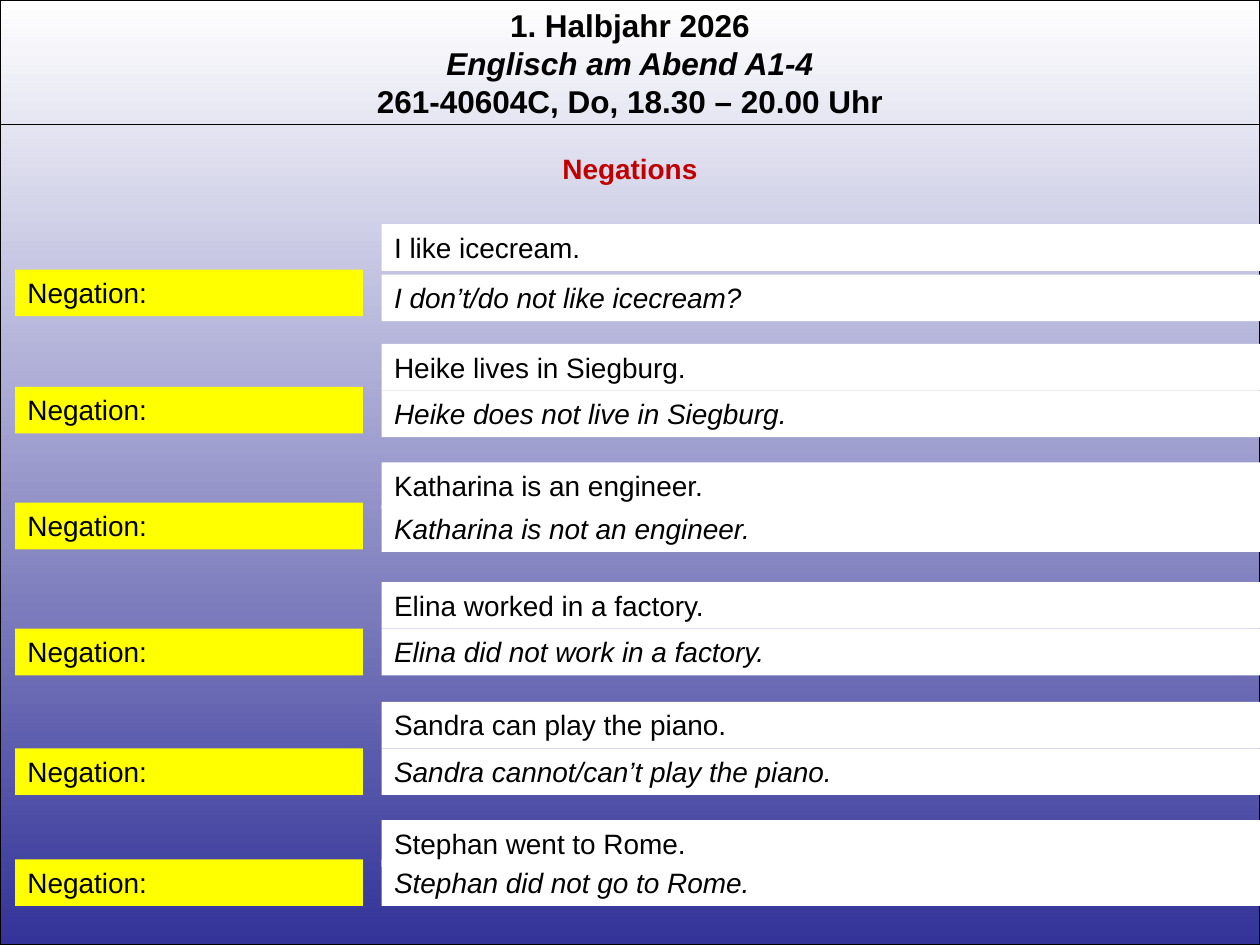
from lxml import etree
from pptx import Presentation
from pptx import util as u
from pptx.dml.color import RGBColor
from pptx.enum import shapes, text
from pptx.oxml.ns import qn

PX = u.Inches(1) // 100
WIDTH, HEIGHT = 1000, 750
LINE_HEIGHT = 37
FONT = "Arial"
COLORS = {
    "ink": "000000",
    "paper": "FFFFFF",
    "depth": "333399",
    "label": "FFFF00",
    "heading": "C00000",
}
EXERCISES = [
    ("I like icecream.", "I don’t/do not like icecream?", 36, 40),
    ("Heike lives in Siegburg.", "Heike does not live in Siegburg.", 34, 37),
    ("Katharina is an engineer.", "Katharina is not an engineer.", 32, 34),
    ("Elina worked in a factory.", "Elina did not work in a factory.", 37, 37),
    ("Sandra can play the piano.", "Sandra cannot/can’t play the piano.", 37, 37),
    ("Stephan went to Rome.", "Stephan did not go to Rome.", 31, 31),
]


def color(name):
    """Return the named palette colour."""
    return RGBColor.from_string(COLORS[name])


def px(*lengths):
    """Convert pixel lengths to EMU."""
    return [length * PX for length in lengths]


def add_text(slide, box, content, size=16, ink="ink", fill=None, bold=False, italic=False, align=None):
    """Add a text box with evenly formatted paragraphs and return its paragraphs."""
    shape = slide.shapes.add_textbox(*px(*box))
    if fill:
        shape.fill.solid()
        shape.fill.fore_color.rgb = color(fill)
    frame = shape.text_frame
    frame.word_wrap = True
    frame.auto_size = text.MSO_AUTO_SIZE.SHAPE_TO_FIT_TEXT
    frame.text = content
    for paragraph in frame.paragraphs:
        paragraph.alignment = align
        for run in paragraph.runs:
            run.font.name = FONT
            run.font.size = u.Pt(size)
            run.font.bold = bold
            run.font.italic = italic
            run.font.color.rgb = color(ink)
    return frame.paragraphs


def add_background(slide, box):
    """Fill the box with a vertical gradient and a thin outline."""
    shape = slide.shapes.add_shape(shapes.MSO_SHAPE.RECTANGLE, *px(*box))
    shape.shadow.inherit = False
    shape.fill.gradient()
    shape.fill.gradient_angle = 270
    for stop, position, name in zip(shape.fill.gradient_stops, (0, 1), ("paper", "depth")):
        stop.position = position
        stop.color.rgb = color(name)
    shape.line.color.rgb = color("ink")
    shape.line.width = u.Pt(0.75)


def add_header(slide, box):
    """Add the three-line course title with a rule below it."""
    left, top, width, height = box
    title = "1. Halbjahr 2026\nEnglisch am Abend A1-4\n261-40604C, Do, 18.30 – 20.00 Uhr"
    paragraphs = add_text(slide, box, title, size=18, bold=True, align=text.PP_ALIGN.CENTER)
    paragraphs[1].runs[0].font.italic = True
    rule_y = top + height - 2
    rule = slide.shapes.add_connector(
        shapes.MSO_CONNECTOR.STRAIGHT, *px(left, rule_y, left + width, rule_y))
    rule.line.color.rgb = color("ink")
    rule.line.width = u.Pt(0.75)
    etree.SubElement(rule._element.spPr, qn("a:effectLst"))


def add_exercise(slide, box, statement, answer, label_offset, answer_offset):
    """Add a statement, its label on the left and its negated form below."""
    left, top, width, height = box
    sentence_left = left + 291
    sentence_width = width - 291
    add_text(slide, (sentence_left, top, sentence_width, height), statement, fill="paper")
    add_text(slide, (left, top + label_offset, 276, height), "Negation:", fill="label")
    add_text(slide, (sentence_left, top + answer_offset, sentence_width, height), answer,
             fill="paper", italic=True)


def add_exercises(slide, box):
    """Spread the exercises evenly over the height of the box."""
    left, top, width, height = box
    for index, exercise in enumerate(EXERCISES):
        row_top = top + round(index * height / len(EXERCISES))
        add_exercise(slide, (left, row_top, width, LINE_HEIGHT), *exercise)


def main():
    """Build and save the presentation."""
    presentation = Presentation()
    presentation.slide_width, presentation.slide_height = px(WIDTH, HEIGHT)
    slide = presentation.slides.add_slide(presentation.slide_layouts[6])
    add_background(slide, (0, 0, WIDTH, HEIGHT))
    add_header(slide, (0, 0, WIDTH, 101))
    add_text(slide, (0, 115, WIDTH, LINE_HEIGHT), "Negations", ink="heading", bold=True,
             align=text.PP_ALIGN.CENTER)
    add_exercises(slide, (12, 178, WIDTH - 12, 568))
    presentation.save("out.pptx")


if __name__ == "__main__":
    main()
